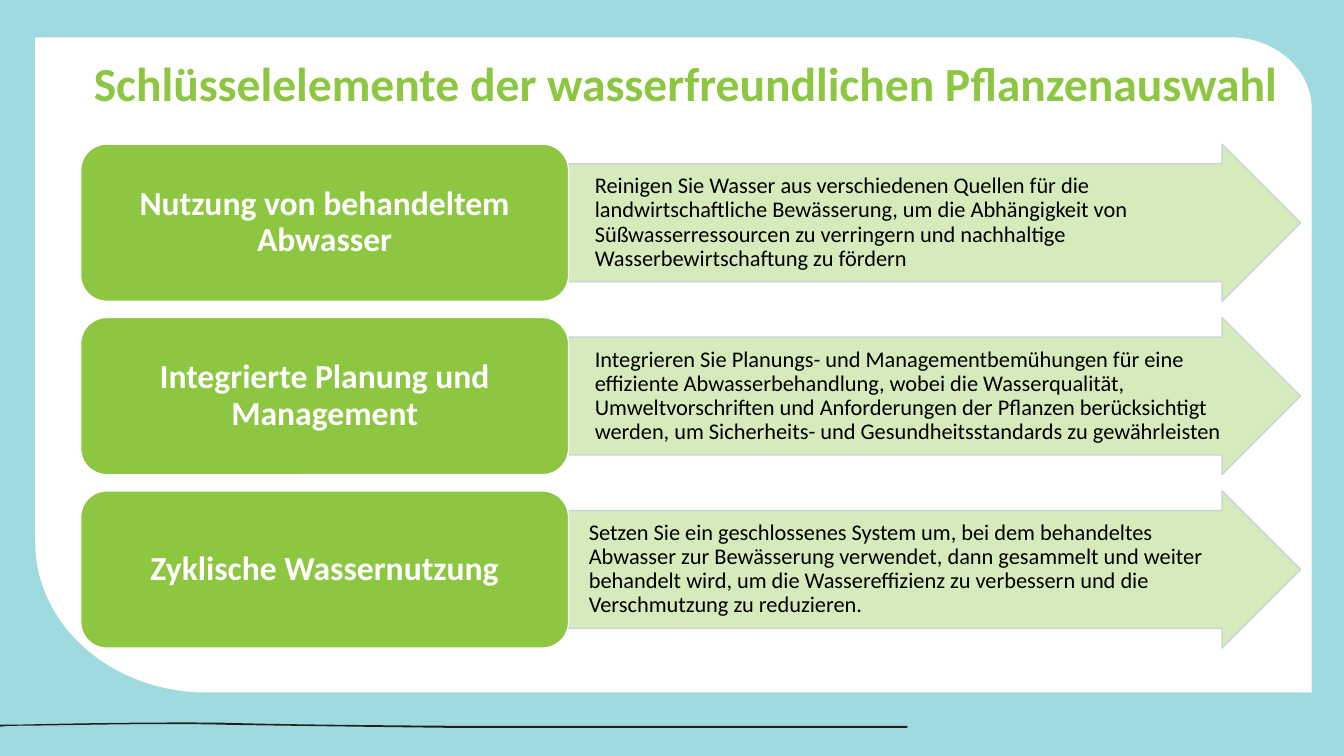
import lxml.etree
import pptx
import pptx.dml.color
import pptx.enum.shapes
import pptx.enum.text
import pptx.oxml.ns
import pptx.util

Inches = pptx.util.Inches
Pt = pptx.util.Pt
qn = pptx.oxml.ns.qn
MSO_SHAPE = pptx.enum.shapes.MSO_SHAPE
PP_ALIGN = pptx.enum.text.PP_ALIGN
MSO_ANCHOR = pptx.enum.text.MSO_ANCHOR

TEAL, WHITE, BLACK, INK = "9FDADF", "FFFFFF", "000000", "231F20"
GREEN, PALE_GREEN, GREY = "8DC641", "D6EBBB", "CAD3D4"

ELEMENTS = [
    ("Nutzung von behandeltem Abwasser",
     "Reinigen Sie Wasser aus verschiedenen Quellen für die landwirtschaftliche "
     "Bewässerung, um die Abhängigkeit von Süßwasserressourcen zu verringern und "
     "nachhaltige Wasserbewirtschaftung zu fördern", 0.26),
    ("Integrierte Planung und Management",
     "Integrieren Sie Planungs- und Managementbemühungen für eine effiziente "
     "Abwasserbehandlung, wobei die Wasserqualität, Umweltvorschriften und "
     "Anforderungen der Pflanzen berücksichtigt werden, um Sicherheits- und "
     "Gesundheitsstandards zu gewährleisten", 0.26),
    ("Zyklische Wassernutzung",
     "Setzen Sie ein geschlossenes System um, bei dem behandeltes Abwasser zur "
     "Bewässerung verwendet, dann gesammelt und weiter behandelt wird, um die "
     "Wassereffizienz zu verbessern und die Verschmutzung zu reduzieren.", 0.2),
]

# Hundredths of an inch; a segment is an end point, or two control points and an end point.
PANEL = [
    [(35, 37)], [(1220, 37)],
    [(1265, 37), (1301, 69), (1301, 108)],
    [(1301, 687)], [(205, 687)],
    [(111, 687), (35, 620), (35, 538)],
]
WAVE = [
    [(900, 722)], [(443, 722)],
    [(441, 722), (280, 720), (223, 719)],
    [(155, 717), (52, 720), (14, 720)],
    [(6, 720), (1, 721), (0, 721)],
    [(0, 719)],
    [(1, 719), (6, 719), (14, 719)],
    [(52, 718), (155, 716), (223, 717)],
    [(281, 719), (441, 720), (443, 720)],
    [(900, 720)],
]


def color(hex_code):
    return pptx.dml.color.RGBColor.from_string(hex_code)


def write(shape, text, size, hex_code, bold, alignment, anchor, left_margin):
    frame = shape.text_frame
    frame.text = text
    frame.word_wrap = True
    frame.auto_size = pptx.enum.text.MSO_AUTO_SIZE.NONE
    frame.vertical_anchor = anchor
    frame.margin_left = Inches(left_margin)
    paragraph = frame.paragraphs[0]
    paragraph.alignment = alignment
    paragraph.line_spacing = 0.9
    font = paragraph.runs[0].font
    font.name = "Calibri"
    font.size = Pt(size)
    font.bold = bold
    font.color.rgb = color(hex_code)


presentation = pptx.Presentation()
presentation.slide_width = Inches(13.33)
presentation.slide_height = Inches(7.5)
slide = presentation.slides.add_slide(presentation.slide_layouts[5])
slide.background.fill.solid()
slide.background.fill.fore_color.rgb = color(TEAL)

# White panel and wavy line
for outline, fill in ((PANEL, WHITE), (WAVE, INK)):
    corners = [segment[-1] for segment in outline]
    left = min(x for x, y in corners)
    top = min(y for x, y in corners)
    builder = slide.shapes.build_freeform(*corners[0], scale=Inches(0.01))
    builder.add_line_segments(corners[1:], close=True)
    shape = builder.convert_to_shape()
    shape.shadow.inherit = False
    shape.fill.solid()
    shape.fill.fore_color.rgb = color(fill)
    shape.line.fill.background()
    # Turn the straight segments that have control points into curves
    lines = list(shape.element.iter(qn("a:lnTo")))
    for line, segment in zip(lines, outline[1:]):
        if len(segment) == 3:
            curve = lxml.etree.Element(qn("a:cubicBezTo"))
            for x, y in segment:
                lxml.etree.SubElement(curve, qn("a:pt"), x=str(x - left), y=str(y - top))
            line.getparent().replace(line, curve)

# The title lies in front of the panel
title = slide.shapes.title
title.element.getparent().append(title.element)
title.left, title.top = Inches(0.58), Inches(0.55)
title.width, title.height = Inches(12.32), Inches(0.88)
write(title, "Schlüsselelemente der wasserfreundlichen Pflanzenauswahl",
      34, GREEN, True, PP_ALIGN.LEFT, MSO_ANCHOR.TOP, 0.35)

# One arrow with its heading box per element
for row, (heading, description, indent) in enumerate(ELEMENTS):
    top = Inches(1.43 + 1.72 * row)
    arrow = slide.shapes.add_shape(
        MSO_SHAPE.RIGHT_ARROW, Inches(5.64), top, Inches(7.26), Inches(1.56))
    arrow.adjustments[0] = 0.75
    box = slide.shapes.add_shape(
        MSO_SHAPE.ROUNDED_RECTANGLE, Inches(0.8), top, Inches(4.84), Inches(1.56))
    for shape, fill, line in ((arrow, PALE_GREEN, GREY), (box, GREEN, WHITE)):
        shape.shadow.inherit = False
        shape.fill.solid()
        shape.fill.fore_color.rgb = color(fill)
        shape.line.color.rgb = color(line)
        shape.line.width = Pt(1)
    write(arrow, description, 16, BLACK, False, PP_ALIGN.LEFT, MSO_ANCHOR.MIDDLE, indent)
    arrow.text_frame.margin_right = Inches(0.01)
    arrow.text_frame.margin_top = arrow.text_frame.margin_bottom = Inches(0.01)
    write(box, heading, 24, WHITE, True, PP_ALIGN.CENTER, MSO_ANCHOR.MIDDLE, 0.1)

presentation.save("out.pptx")
